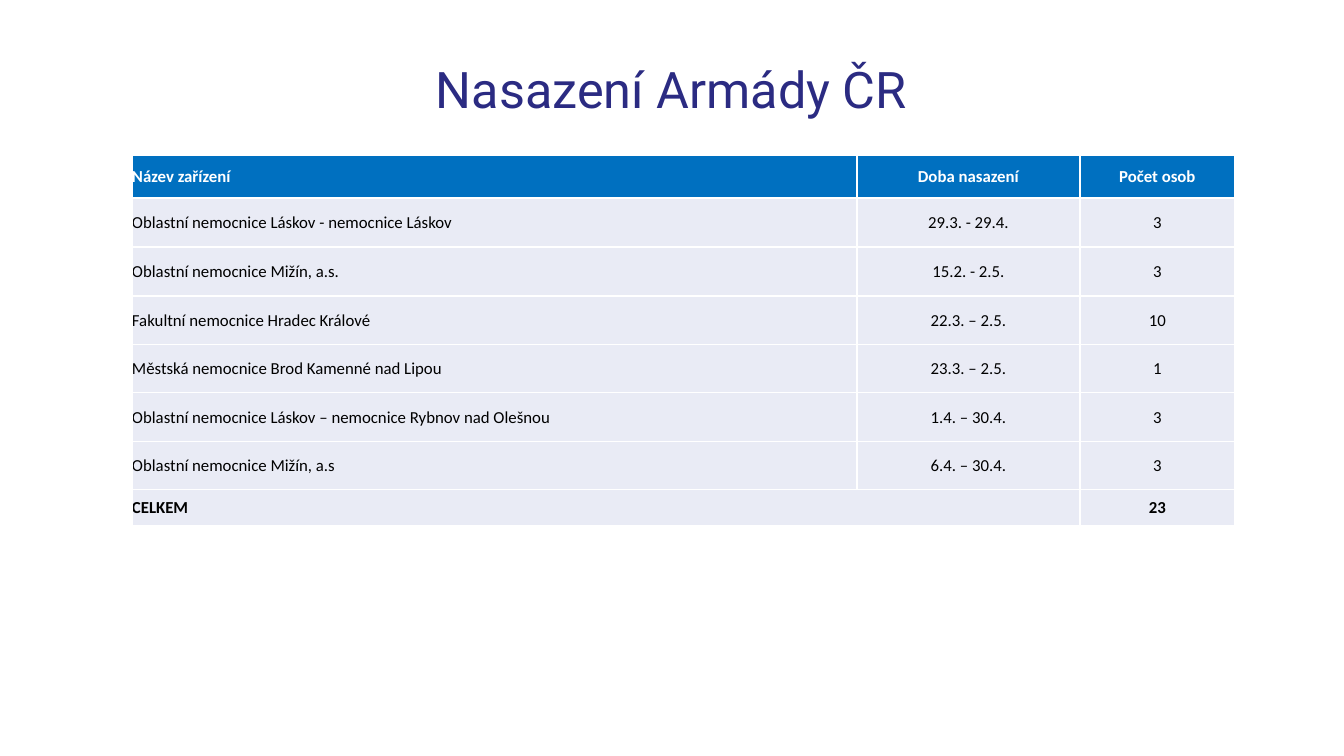
import pptx
import pptx.dml.color
import pptx.enum.text
import pptx.oxml
import pptx.oxml.ns
import pptx.util

RGB = pptx.dml.color.RGBColor
NAVY = RGB(0x2B, 0x2B, 0x82)
BLUE = RGB(0x00, 0x70, 0xC0)
PALE = RGB(0xE9, 0xEB, 0xF5)
WHITE = RGB(0xFF, 0xFF, 0xFF)
BLACK = RGB(0x00, 0x00, 0x00)

LEFT = pptx.enum.text.PP_ALIGN.LEFT
CENTER = pptx.enum.text.PP_ALIGN.CENTER
MIDDLE = pptx.enum.text.MSO_ANCHOR.MIDDLE

HEADER = ("Název zařízení", "Doba nasazení", "Počet osob")
DEPLOYMENTS = [
    ("Oblastní nemocnice Láskov - nemocnice Láskov", "29.3. - 29.4.", "3"),
    ("Oblastní nemocnice Mižín, a.s.", "15.2. - 2.5.", "3"),
    ("Fakultní nemocnice Hradec Králové", "22.3. – 2.5.", "10"),
    ("Městská nemocnice Brod Kamenné nad Lipou", "23.3. – 2.5.", "1"),
    ("Oblastní nemocnice Láskov – nemocnice Rybnov nad Olešnou", "1.4. – 30.4.", "3"),
    ("Oblastní nemocnice Mižín, a.s", "6.4. – 30.4.", "3"),
]
TOTAL = ("CELKEM", "", "23")
COLUMN_WIDTHS = (725, 223, 155)
ROW_HEIGHTS = (43, 49, 49, 49, 48, 49, 48, 36)


def px(n):
    return pptx.util.Emu(round(n * 914400 / 100.8))


def put_text(tf, text, size=12, font="Calibri", color=BLACK, bold=False,
             align=LEFT, spacing=None):
    p = tf.paragraphs[0]
    p.alignment = align
    p.line_spacing = spacing
    r = p.add_run()
    r.text = text
    r.font.size = pptx.util.Pt(size)
    r.font.name = font
    r.font.bold = bold
    r.font.color.rgb = color


class SlideBuilder:
    def __init__(self, prs):
        self.s = prs.slides.add_slide(prs.slide_layouts[6])

    def title(self, text, x, y, w, h):
        tf = self.s.shapes.add_textbox(px(x), px(y), px(w), px(h)).text_frame
        tf.word_wrap = True
        tf.vertical_anchor = MIDDLE
        put_text(tf, text, size=36, font="Roboto", color=NAVY,
                 align=CENTER, spacing=0.9)

    def border(self, cell):
        tcPr = cell._tc.get_or_add_tcPr()
        for i, side in enumerate(("lnL", "lnR", "lnT", "lnB")):
            tcPr.insert(i, pptx.oxml.parse_xml(
                f'<a:{side} {pptx.oxml.ns.nsdecls("a")} w="12700"><a:solidFill>'
                f'<a:srgbClr val="{WHITE}"/></a:solidFill></a:{side}>'))

    def cell(self, cell, text, fill, **fmt):
        cell.margin_left = cell.margin_right = 0
        cell.margin_top = cell.margin_bottom = 0
        cell.vertical_anchor = MIDDLE
        cell.fill.solid()
        cell.fill.fore_color.rgb = fill
        self.border(cell)
        put_text(cell.text_frame, text, **fmt)

    def table(self, rows, x, y, widths, heights):
        tbl = self.s.shapes.add_table(
            len(rows), len(widths), px(x), px(y),
            px(sum(widths)), px(sum(heights))).table
        tbl.horz_banding = False
        for col, w in zip(tbl.columns, widths):
            col.width = px(w)
        for row, h in zip(tbl.rows, heights):
            row.height = px(h)
        last = len(rows) - 1
        for i, row in enumerate(rows):
            for j, text in enumerate(row):
                self.cell(tbl.cell(i, j), text, BLUE if i == 0 else PALE,
                          color=WHITE if i == 0 else BLACK,
                          bold=i in (0, last), align=CENTER if j else LEFT)
        # The total label spans the first two columns
        tbl.cell(last, 0).merge(tbl.cell(last, 1))


def main():
    prs = pptx.Presentation()
    prs.slide_width = px(1344)
    prs.slide_height = px(756)
    slide = SlideBuilder(prs)
    # Heading
    slide.title("Nasazení Armády ČR", 92, 40, 1159, 105)
    # Deployments by facility
    slide.table([HEADER, *DEPLOYMENTS, TOTAL], 132, 155,
                COLUMN_WIDTHS, ROW_HEIGHTS)
    prs.save("out.pptx")


if __name__ == "__main__":
    main()
